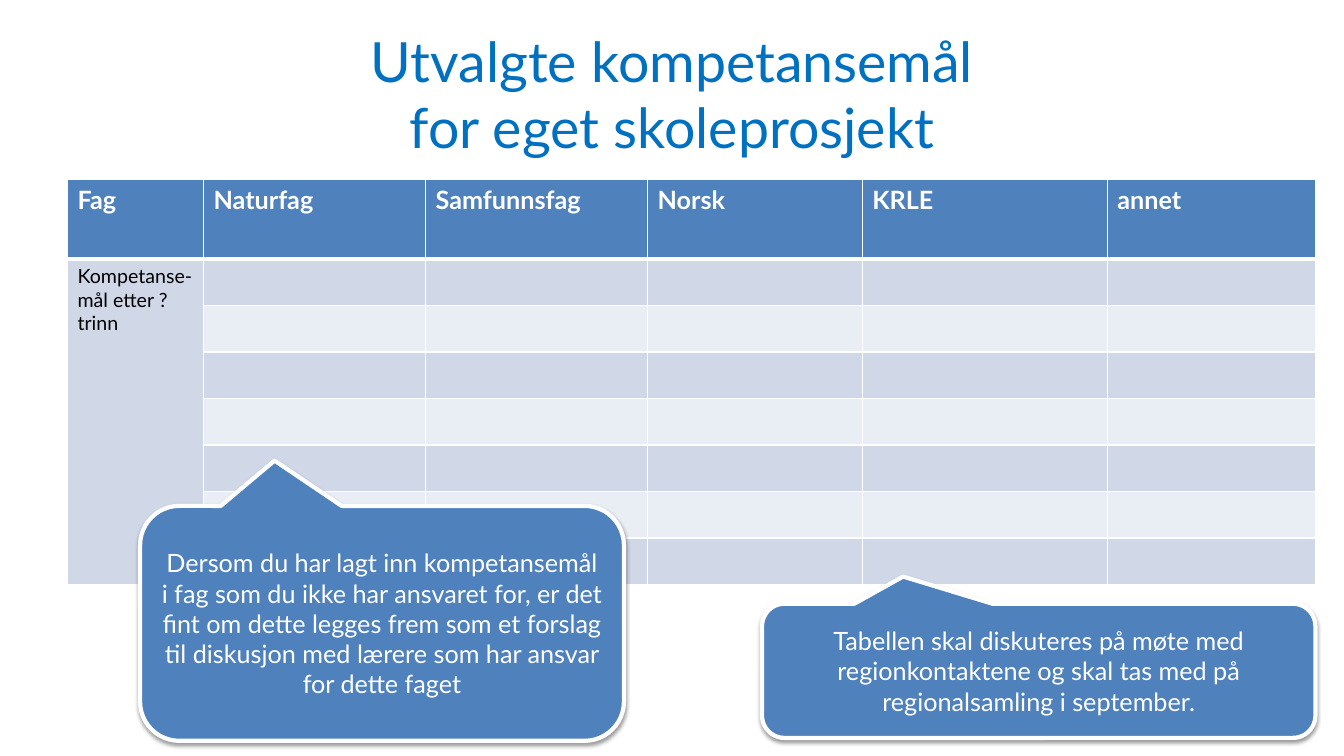
"""Build the slide with a competence-goal table and two callouts."""
from dataclasses import dataclass

from lxml.etree import SubElement
from pptx import Presentation
from pptx.dml.color import RGBColor
from pptx.enum.shapes import MSO_SHAPE
from pptx.enum.text import MSO_ANCHOR, PP_ALIGN
from pptx.oxml import parse_xml
from pptx.oxml.ns import nsdecls, qn
from pptx.util import Pt

FONT = "Lato"
COLORS = {
    "title": "0070C0",
    "blue": "4F81BD",
    "band_dark": "D0D8E8",
    "band_light": "E9EDF4",
    "white": "FFFFFF",
    "black": "000000",
}
HEADERS = ("Fag", "Naturfag", "Samfunnsfag", "Norsk", "KRLE", "annet")
COL_WIDTHS = (97.2, 158.6, 158.6, 153.4, 175, 148.5)
HEADER_HEIGHT, GOAL_HEIGHT, GOAL_ROWS = 56.9, 33.2, 7


@dataclass(frozen=True)
class Box:
    left: float
    top: float
    width: float
    height: float

    def lengths(self) -> tuple:
        return Pt(self.left), Pt(self.top), Pt(self.width), Pt(self.height)


@dataclass(frozen=True)
class Callout:
    box: Box
    tip: tuple[float, float]
    text: str


CALLOUTS = (
    Callout(
        Box(544.3, 431.3, 395.3, 95.8),
        (-0.245, -0.703),
        "Tabellen skal diskuteres på møte med regionkontaktene og skal tas "
        "med på regionalsamling i september.",
    ),
    Callout(
        Box(100.1, 361.4, 345.6, 167.8),
        (-0.222, -0.693),
        "Dersom du har lagt inn kompetansemål i fag som du ikke har ansvaret "
        "for, er det fint om dette legges frem som et forslag til diskusjon "
        "med lærere som har ansvar for dette faget",
    ),
)


def rgb(name: str) -> RGBColor:
    return RGBColor.from_string(COLORS[name])


def add_run(p, text: str, size: float, color: str, bold: bool = False) -> None:
    r = p.add_run()
    r.text = text
    r.font.name = FONT
    r.font.size = Pt(size)
    r.font.bold = bold
    r.font.color.rgb = rgb(color)


def add_title(s, box: Box, lines: tuple[str, ...]) -> None:
    tf = s.shapes.add_textbox(*box.lengths()).text_frame
    tf.word_wrap = True
    tf.vertical_anchor = MSO_ANCHOR.MIDDLE
    p = tf.paragraphs[0]
    p.alignment = PP_ALIGN.CENTER
    for i, line in enumerate(lines):
        if i:
            p.add_line_break()
        add_run(p, line, 39.6, "title")


def style_cell(cell, row: int) -> None:
    tc_pr = cell._tc.get_or_add_tcPr()
    widths = {"L": 1, "R": 1, "T": 3 if row == 1 else 1, "B": 3 if row == 0 else 1}
    for side, width in widths.items():
        ln = SubElement(tc_pr, qn(f"a:ln{side}"), w=str(Pt(width)))
        fill = SubElement(ln, qn("a:solidFill"))
        SubElement(fill, qn("a:srgbClr"), val=COLORS["white"])
    band = "band_dark" if row % 2 else "band_light"
    cell.fill.solid()
    cell.fill.fore_color.rgb = rgb(band if row else "blue")


def add_goal_table(s, left: float, top: float) -> None:
    box = Box(left, top, sum(COL_WIDTHS), HEADER_HEIGHT + GOAL_ROWS * GOAL_HEIGHT)
    table = s.shapes.add_table(GOAL_ROWS + 1, len(HEADERS), *box.lengths()).table
    for col, width in zip(table.columns, COL_WIDTHS):
        col.width = Pt(width)
    for i, row in enumerate(table.rows):
        row.height = Pt(GOAL_HEIGHT if i else HEADER_HEIGHT)
        for cell in row.cells:
            style_cell(cell, i)
    for j, header in enumerate(HEADERS):
        add_run(table.cell(0, j).text_frame.paragraphs[0], header, 18, "white", True)
    goal = table.cell(1, 0)
    goal.merge(table.cell(GOAL_ROWS, 0))
    add_run(goal.text_frame.paragraphs[0], "Kompetanse-mål etter ? trinn", 14, "black")


def add_shadow(sp) -> None:
    sp._element.spPr.append(parse_xml(
        f'<a:effectLst {nsdecls("a")}>'
        f'<a:outerShdw blurRad="{Pt(3.1)}" dist="{Pt(1.6)}" dir="5400000" rotWithShape="0">'
        f'<a:srgbClr val="{COLORS["black"]}"><a:alpha val="38000"/></a:srgbClr>'
        '</a:outerShdw></a:effectLst>'
    ))


def add_callout(s, callout: Callout) -> None:
    sp = s.shapes.add_shape(MSO_SHAPE.ROUNDED_RECTANGULAR_CALLOUT, *callout.box.lengths())
    for i, value in enumerate((*callout.tip, 0.167)):
        sp.adjustments[i] = value
    sp.fill.solid()
    sp.fill.fore_color.rgb = rgb("blue")
    sp.line.color.rgb = rgb("white")
    sp.line.width = Pt(3)
    add_shadow(sp)
    tf = sp.text_frame
    tf.word_wrap = True
    tf.vertical_anchor = MSO_ANCHOR.MIDDLE
    p = tf.paragraphs[0]
    p.alignment = PP_ALIGN.CENTER
    add_run(p, callout.text, 18, "white")


def main() -> None:
    prs = Presentation()
    prs.slide_width, prs.slide_height = Pt(960), Pt(540)
    s = prs.slides.add_slide(prs.slide_layouts[6])
    add_title(s, Box(48, 21.6, 864, 90), ("Utvalgte kompetansemål", "for eget skoleprosjekt"))
    add_goal_table(s, 48.2, 128.2)
    for callout in CALLOUTS:
        add_callout(s, callout)
    prs.save("out.pptx")


if __name__ == "__main__":
    main()
